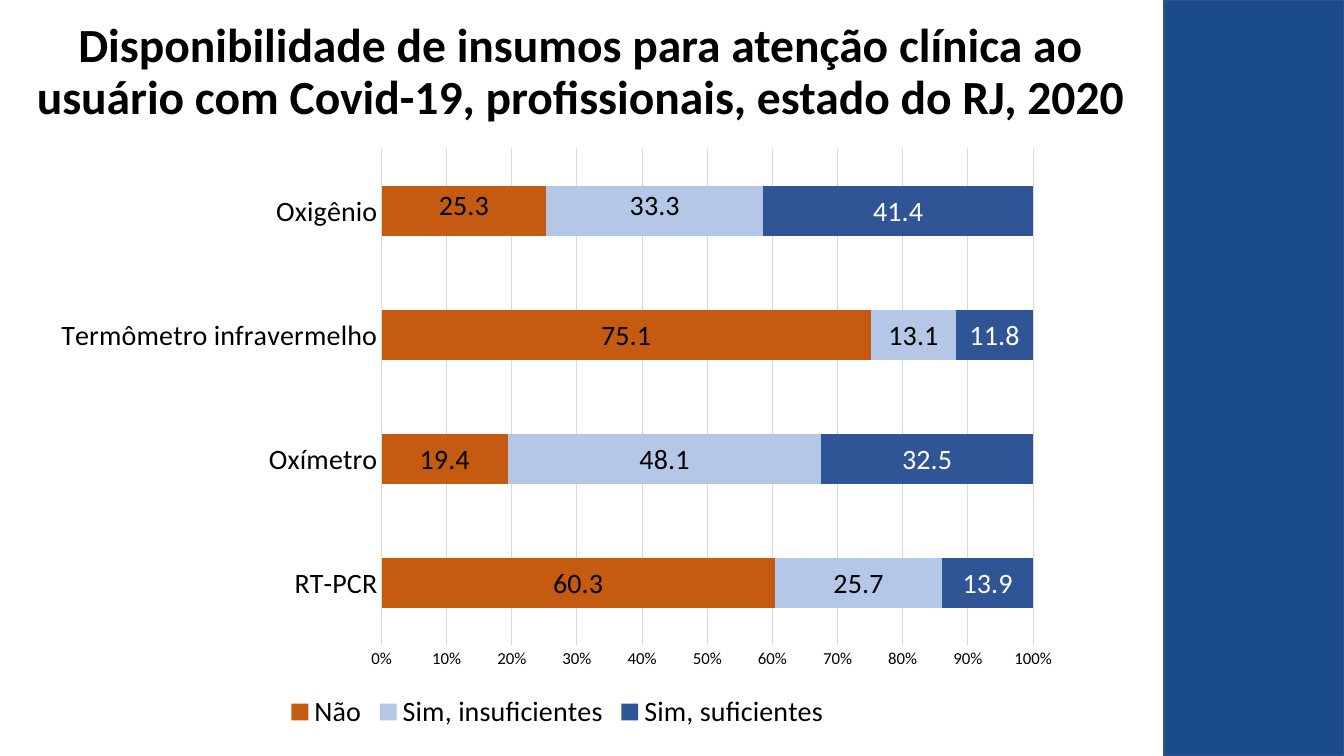
import pptx
import pptx.util
import pptx.chart.data
import pptx.dml.color
import pptx.enum.chart
import pptx.enum.shapes
import pptx.enum.text
import pptx.oxml

Pt = pptx.util.Pt
FONT = "Calibri"
COLORS = {
    "band": "1A4B8D", "band_edge": "31538F", "text": "000000", "light": "FFFFFF",
    "grid": "D9D9D9", "no": "C55A11", "scarce": "B4C7E7", "enough": "2F5597",
}
HEADLINE = ("Disponibilidade de insumos para atenção clínica ao usuário "
            "com Covid-19, profissionais, estado do RJ, 2020")
SUPPLIES = ["RT-PCR", "Oxímetro", "Termômetro infravermelho", "Oxigênio"]
ANSWERS = [
    ("Não", [60.3, 19.4, 75.1, 25.3], "no", "text"),
    ("Sim, insuficientes", [25.7, 48.1, 13.1, 33.3], "scarce", "text"),
    ("Sim, suficientes", [13.9, 32.5, 11.8, 41.4], "enough", "light"),
]
RAISED_LABELS = {"Não": 3, "Sim, insuficientes": 3}
PLOT_FRAME = {"x": 0.33, "y": 0.02, "w": 0.63, "h": 0.83}
SLIDE_W, SLIDE_H = 960, 540
BAND_LEFT = 831.5


def rgb(name):
    return pptx.dml.color.RGBColor.from_string(COLORS[name])


def style_font(font, size, color="text"):
    font.name = FONT
    font.size = Pt(size)
    font.color.rgb = rgb(color)


def style_line(line, color, width):
    line.color.rgb = rgb(color)
    line.width = Pt(width)


def manual_layout(settings):
    namespace = "http://schemas.openxmlformats.org/drawingml/2006/chart"
    parts = "".join(f'<c:{tag} val="{value}"/>' for tag, value in settings)
    return pptx.oxml.parse_xml(
        f'<c:layout xmlns:c="{namespace}"><c:manualLayout>{parts}'
        '</c:manualLayout></c:layout>')


def add_band(slide):
    band = slide.shapes.add_shape(
        pptx.enum.shapes.MSO_SHAPE.RECTANGLE,
        Pt(BAND_LEFT), 0, Pt(SLIDE_W - BAND_LEFT), Pt(SLIDE_H))
    band.shadow.inherit = False
    band.fill.solid()
    band.fill.fore_color.rgb = rgb("band")
    style_line(band.line, "band_edge", 1)


def add_headline(slide):
    title = slide.shapes.title
    title.left, title.top, title.width, title.height = Pt(14.4), 0, Pt(800.6), Pt(104.4)
    frame = title.text_frame
    frame.word_wrap = True
    frame.auto_size = pptx.enum.text.MSO_AUTO_SIZE.NONE
    frame.vertical_anchor = pptx.enum.text.MSO_ANCHOR.MIDDLE
    paragraph = frame.paragraphs[0]
    paragraph.alignment = pptx.enum.text.PP_ALIGN.CENTER
    paragraph.line_spacing = 0.9
    run = paragraph.add_run()
    run.text = HEADLINE
    style_font(run.font, 34)
    run.font.bold = True


def style_axes(chart):
    for axis, size in ((chart.category_axis, 20), (chart.value_axis, 12)):
        axis.major_tick_mark = pptx.enum.chart.XL_TICK_MARK.NONE
        axis.minor_tick_mark = pptx.enum.chart.XL_TICK_MARK.NONE
        style_font(axis.tick_labels.font, size)
    style_line(chart.category_axis.format.line, "grid", 0.75)
    percent = chart.value_axis
    percent.format.line.fill.background()
    percent.has_major_gridlines = True
    style_line(percent.major_gridlines.format.line, "grid", 0.75)
    percent.minimum_scale, percent.maximum_scale, percent.major_unit = 0, 1, 0.1
    percent.tick_labels.number_format = "0%"
    percent.tick_labels.number_format_is_linked = False


def style_answers(plot):
    for answer, (name, _, fill, label_color) in zip(plot.series, ANSWERS):
        answer.format.fill.solid()
        answer.format.fill.fore_color.rgb = rgb(fill)
        labels = answer.data_labels
        labels.show_value = True
        labels.number_format = "0.0"
        labels.number_format_is_linked = False
        style_font(labels.font, 20, label_color)
        if name in RAISED_LABELS:
            style_font(answer.points[RAISED_LABELS[name]].data_label.font, 20, label_color)
            index = answer._element.xpath("c:dLbls/c:dLbl/c:idx")[0]
            index.addnext(manual_layout([("x", 0), ("y", -0.01)]))


def add_supply_chart(slide):
    data = pptx.chart.data.CategoryChartData(number_format="0.0")
    data.categories = SUPPLIES
    for name, shares, _, _ in ANSWERS:
        data.add_series(name, shares)
    chart = slide.shapes.add_chart(
        pptx.enum.chart.XL_CHART_TYPE.BAR_STACKED_100,
        Pt(28.8), Pt(98), Pt(738.7), Pt(427), data).chart
    style_font(chart.font, 10)
    chart.has_title = False
    chart.has_legend = True
    chart.legend.position = pptx.enum.chart.XL_LEGEND_POSITION.BOTTOM
    chart.legend.include_in_layout = False
    style_font(chart.legend.font, 20)
    plot = chart.plots[0]
    plot.gap_width, plot.overlap = 150, 100
    plot.vary_by_categories = False
    style_axes(chart)
    style_answers(plot)
    plot_area = chart._chartSpace.chart.plotArea
    for automatic in plot_area.xpath("c:layout"):
        plot_area.remove(automatic)
    plot_area.insert(0, manual_layout(
        [("layoutTarget", "inner"), ("xMode", "edge"), ("yMode", "edge"),
         *PLOT_FRAME.items()]))


def main():
    deck = pptx.Presentation()
    deck.slide_width, deck.slide_height = Pt(SLIDE_W), Pt(SLIDE_H)
    slide = deck.slides.add_slide(deck.slide_layouts[5])
    add_band(slide)
    add_headline(slide)
    add_supply_chart(slide)
    deck.save("out.pptx")


if __name__ == "__main__":
    main()
